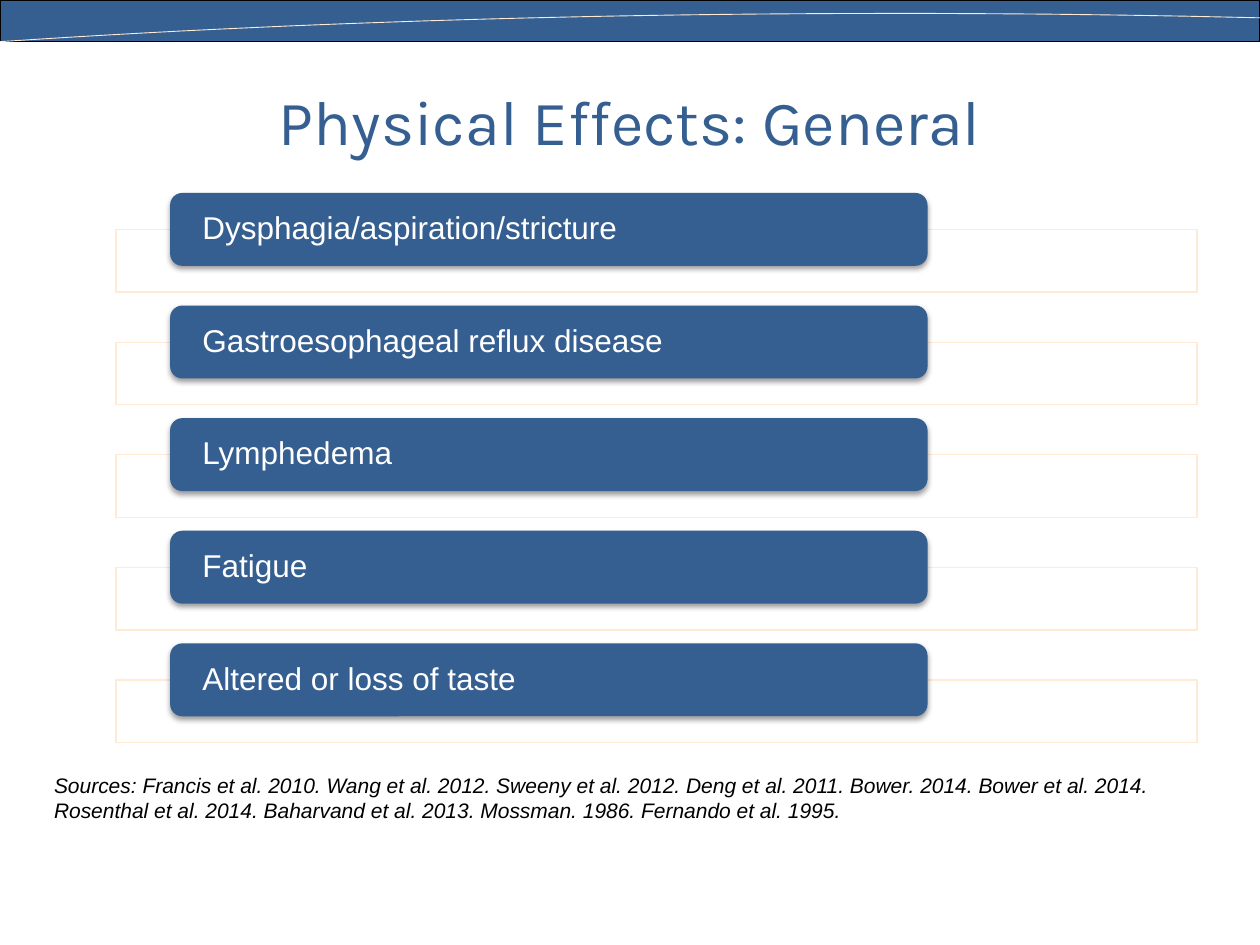
from lxml.etree import SubElement
from pptx import Presentation
from pptx.dml.color import RGBColor
from pptx.enum.shapes import MSO_SHAPE
from pptx.enum.text import MSO_ANCHOR, PP_ALIGN
from pptx.oxml.ns import qn
from pptx.util import Cm, Pt

# Content
TITLE = "Physical Effects: General"
EFFECTS = [
    "Dysphagia/aspiration/stricture",
    "Gastroesophageal reflux disease",
    "Lymphedema",
    "Fatigue",
    "Altered or loss of taste",
]
SOURCES = (
    "Sources: Francis et al. 2010. Wang et al. 2012. Sweeny et al. 2012. "
    "Deng et al. 2011. Bower. 2014. Bower et al. 2014. Rosenthal et al. 2014. "
    "Baharvand et al. 2013. Mossman. 1986. Fernando et al. 1995."
)

# Look and measures in centimetres
BLUE, PEACH, WHITE, BLACK = "365F91", "FFEAD5", "FFFFFF", "000000"
SLIDE_W, SLIDE_H = 25.4, 19.05
BAND_H = 0.84
CURVE = [(25.4, 0.36), (18.9, 0.2), (9.63, 0.2), (0, 0.84)]
CURVE_STEPS = 40
FIRST_BAR_TOP, ROW_PITCH = 3.89, 2.27
BAR_LEFT, BAR_W, BAR_H = 3.43, 15.27, 1.47
FRAME_LEFT, FRAME_W, FRAME_H, FRAME_DROP = 2.34, 21.79, 1.26, 0.74


def color(hex_code):
    return RGBColor.from_string(hex_code)


def box(place):
    return [Cm(length) for length in place]


def add_box(kind, place, fill, line=None):
    shape = slide.shapes.add_shape(kind, *box(place))
    shape.fill.solid()
    shape.fill.fore_color.rgb = color(fill)
    if line:
        shape.line.color.rgb = color(line)
        shape.line.width = Pt(0.75)
    else:
        shape.line.fill.background()
    shape.shadow.inherit = False
    return shape


def add_text(frame, text, font_name, size, hex_code, italic=None):
    paragraph = frame.paragraphs[0]
    run = paragraph.add_run()
    run.text = text
    run.font.name = font_name
    run.font.size = Pt(size)
    run.font.color.rgb = color(hex_code)
    run.font.italic = italic
    return paragraph


def set_alpha(parent, percent):
    SubElement(parent, qn("a:alpha"), val=str(percent * 1000))


def add_drop_shadow(shape):
    effects = shape._element.spPr.find(qn("a:effectLst"))
    shadow = SubElement(effects, qn("a:outerShdw"), blurRad=str(Pt(3.1)),
                        dist=str(Pt(1.6)), dir="5400000", rotWithShape="0")
    set_alpha(SubElement(shadow, qn("a:srgbClr"), val=BLACK), 38)


def bezier_point(t):
    weights = [(1 - t) ** 3, 3 * t * (1 - t) ** 2, 3 * t ** 2 * (1 - t), t ** 3]
    return tuple(Cm(sum(w * point[axis] for w, point in zip(weights, CURVE)))
                 for axis in (0, 1))


presentation = Presentation()
presentation.slide_width, presentation.slide_height = Cm(SLIDE_W), Cm(SLIDE_H)
slide = presentation.slides.add_slide(presentation.slide_layouts[5])

# Header band with its curve
add_box(MSO_SHAPE.RECTANGLE, (0, 0, SLIDE_W, BAND_H), BLUE, BLACK)
curve_points = [bezier_point(step / CURVE_STEPS) for step in range(CURVE_STEPS + 1)]
builder = slide.shapes.build_freeform(*curve_points[0])
builder.add_line_segments(curve_points[1:], close=False)
curve = builder.convert_to_shape()
curve.fill.background()
curve.line.color.rgb = color(PEACH)
curve.line.width = Pt(0.5)
curve.shadow.inherit = False

# Title
title = slide.shapes.title
title.left, title.top, title.width, title.height = box((1.27, 0.84, 22.86, 3.18))
title.text_frame.vertical_anchor = MSO_ANCHOR.MIDDLE
add_text(title.text_frame, TITLE, "Karla", 36, BLUE).alignment = PP_ALIGN.CENTER

# One frame and one labelled bar per effect
for row, effect in enumerate(EFFECTS):
    bar_top = FIRST_BAR_TOP + row * ROW_PITCH
    frame = add_box(MSO_SHAPE.RECTANGLE,
                    (FRAME_LEFT, bar_top + FRAME_DROP, FRAME_W, FRAME_H), WHITE, PEACH)
    set_alpha(frame._element.spPr.find(qn("a:solidFill"))[0], 90)

    bar = add_box(MSO_SHAPE.ROUNDED_RECTANGLE, (BAR_LEFT, bar_top, BAR_W, BAR_H), BLUE)
    add_drop_shadow(bar)
    label = bar.text_frame
    label.word_wrap = True
    label.vertical_anchor = MSO_ANCHOR.MIDDLE
    label.margin_left = label.margin_right = Cm(0.58)
    label.margin_top = label.margin_bottom = 0
    paragraph = add_text(label, effect, "Arial", 18, WHITE)
    paragraph.alignment = PP_ALIGN.LEFT
    paragraph.line_spacing = 0.9

# Sources
sources = slide.shapes.add_textbox(*box((0.84, 15.44, 23.29, 1.3))).text_frame
sources.word_wrap = True
add_text(sources, SOURCES, "Arial", 12, BLACK, italic=True).space_after = Pt(6)

presentation.save("out.pptx")
